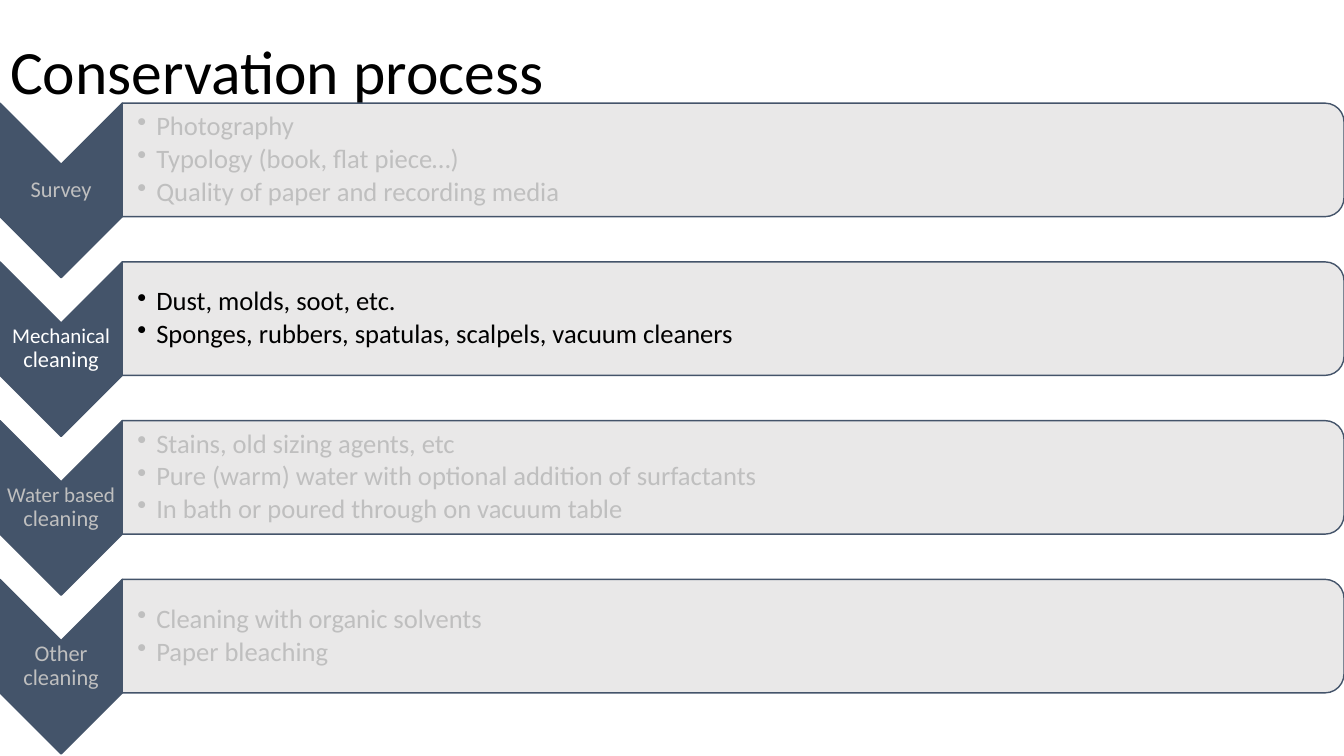
from lxml import etree
from pptx import Presentation
from pptx import util as u
from pptx.dml.color import RGBColor
from pptx.enum import shapes, text
from pptx.oxml.ns import qn

# Content
TITLE = "Conservation process"
# Each step: label runs (words, size), items, label colour, item colour
STEPS = [
    ([("Survey", 16)],
     ["Photography",
      "Typology (book, flat piece…)",
      "Quality of paper and recording media"], "BFBFBF", "BFBFBF"),
    ([("Mechanical ", 15), ("cleaning", 16)],
     ["Dust, molds, soot, etc.",
      "Sponges, rubbers, spatulas, scalpels, vacuum cleaners"], "FFFFFF", "000000"),
    ([("Water based ", 15), ("cleaning", 16)],
     ["Stains, old sizing agents, etc",
      "Pure (warm) water with optional addition of surfactants",
      "In bath or poured through on vacuum table"], "BFBFBF", "BFBFBF"),
    ([("Other cleaning", 16)],
     ["Cleaning with organic solvents",
      "Paper bleaching"], "BFBFBF", "BFBFBF"),
]
FONT, NAVY, GREY = "Calibri", "44546A", "E7E6E6"

# Layout in centimetres
PAGE_WIDTH, PAGE_HEIGHT = 33.87, 19.05
FIRST_TOP, PITCH = 2.6, 4.0
CHEVRON_WIDTH, CHEVRON_HEIGHT = 3.08, 4.4
BAR_HEIGHT = 2.86
BAR_WIDTH = PAGE_WIDTH - CHEVRON_WIDTH
LABEL_HEIGHT, LIST_HEIGHT = 1.32, 2.6
INSET, LIST_INSET, INDENT = 0.03, 0.38, 0.48


def colour(value):
    return RGBColor.from_string(value)


def add_turned(page, kind, left, top, width, height, fill):
    """Add a shape turned by 90 degrees that covers the given area."""
    shape = page.shapes.add_shape(
        kind, u.Cm(left + (width - height) / 2), u.Cm(top + (height - width) / 2),
        u.Cm(height), u.Cm(width))
    shape.rotation = 90
    shape.shadow.inherit = False
    shape.fill.solid()
    shape.fill.fore_color.rgb = colour(fill)
    shape.line.color.rgb = colour(NAVY)
    shape.line.width = u.Pt(1)
    return shape


def add_box(page, left, middle, width, height, left_inset):
    box = page.shapes.add_textbox(
        u.Cm(left), u.Cm(middle - height / 2), u.Cm(width), u.Cm(height))
    frame = box.text_frame
    frame.word_wrap = True
    frame.vertical_anchor = text.MSO_ANCHOR.MIDDLE
    frame.margin_left = u.Cm(left_inset)
    frame.margin_right = frame.margin_top = frame.margin_bottom = u.Cm(INSET)
    return frame


def add_span(para, words, size, value):
    span = para.add_run()
    span.text = words
    span.font.name = FONT
    span.font.size = u.Pt(size)
    span.font.color.rgb = colour(value)


def add_bullet(para):
    properties = para._p.get_or_add_pPr()
    properties.set("marL", str(u.Cm(INDENT)))
    properties.set("indent", str(-u.Cm(INDENT)))
    etree.SubElement(properties, qn("a:buChar"), char="•")


def main():
    deck = Presentation()
    deck.slide_width, deck.slide_height = u.Cm(PAGE_WIDTH), u.Cm(PAGE_HEIGHT)
    page = deck.slides.add_slide(deck.slide_layouts[5])

    # Title
    title = page.shapes.title
    title.left, title.top = u.Cm(0), u.Cm(0.05)
    title.width, title.height = u.Cm(29.2), u.Cm(3.68)
    title.text_frame.vertical_anchor = text.MSO_ANCHOR.MIDDLE
    para = title.text_frame.paragraphs[0]
    para.alignment = text.PP_ALIGN.LEFT
    para.line_spacing = 0.9
    add_span(para, TITLE, 44, "000000")

    for row, (label, items, label_colour, item_colour) in enumerate(STEPS):
        top = FIRST_TOP + row * PITCH

        # Chevron with its label
        add_turned(page, shapes.MSO_SHAPE.CHEVRON, 0, top,
                   CHEVRON_WIDTH, CHEVRON_HEIGHT, NAVY)
        frame = add_box(page, 0, top + CHEVRON_HEIGHT / 2,
                        CHEVRON_WIDTH, LABEL_HEIGHT, INSET)
        para = frame.paragraphs[0]
        para.alignment = text.PP_ALIGN.CENTER
        para.line_spacing = 0.9
        para.space_after = u.Pt(5.6)
        for words, size in label:
            add_span(para, words, size, label_colour)

        # Bar with its list
        bar = add_turned(page, shapes.MSO_SHAPE.ROUND_2_SAME_RECTANGLE,
                         CHEVRON_WIDTH, top, BAR_WIDTH, BAR_HEIGHT, GREY)
        tint = bar.fill._xPr.find(qn("a:solidFill"))[0]
        etree.SubElement(tint, qn("a:alpha"), val="90000")
        frame = add_box(page, CHEVRON_WIDTH, top + BAR_HEIGHT / 2,
                        BAR_WIDTH - 0.14, LIST_HEIGHT, LIST_INSET)
        for number, item in enumerate(items):
            para = frame.add_paragraph() if number else frame.paragraphs[0]
            para.level = 1
            para.line_spacing = 0.9
            para.space_after = u.Pt(2.85)
            add_bullet(para)
            add_span(para, item, 19, item_colour)

    deck.save("out.pptx")


if __name__ == "__main__":
    main()
